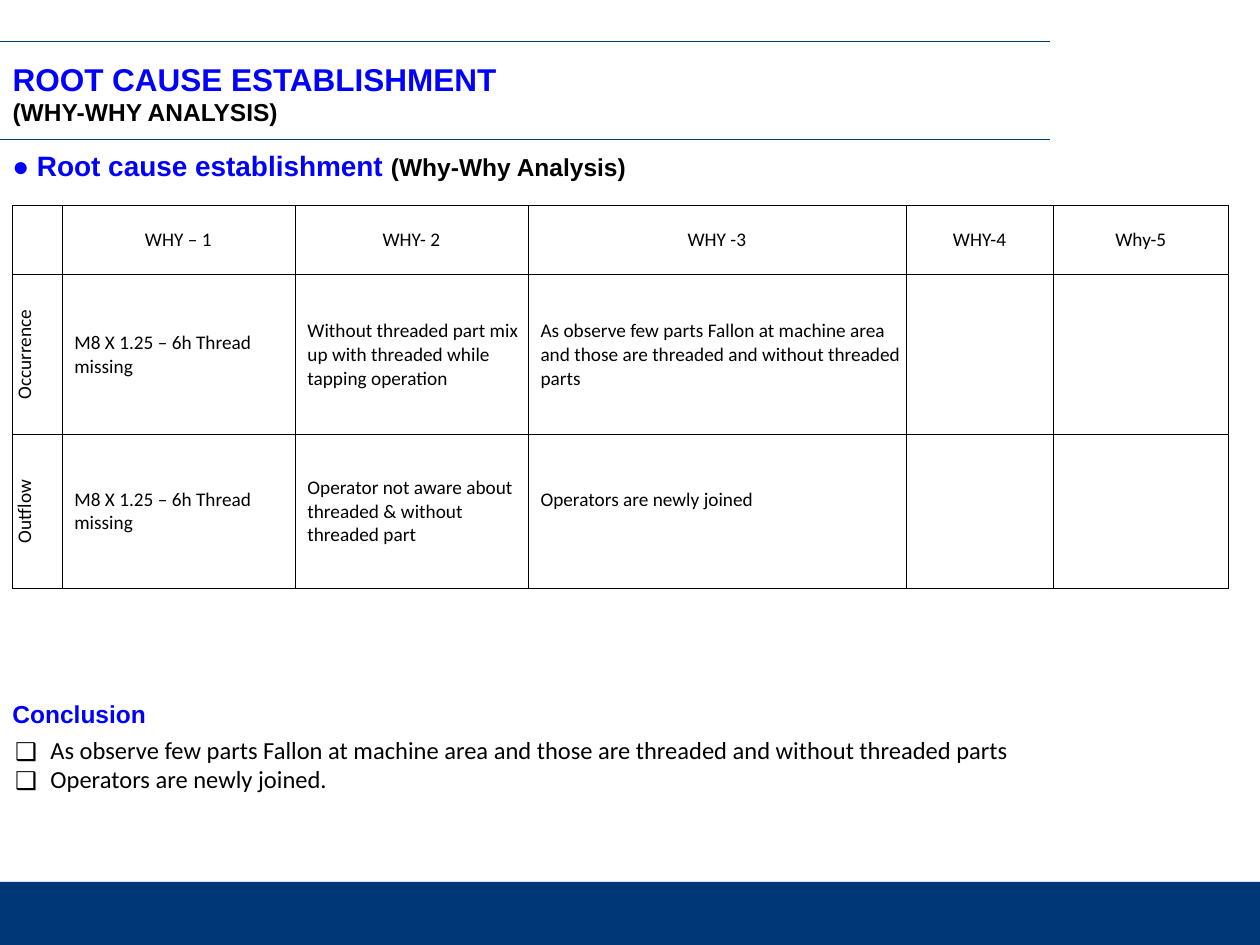
"""Build the why-why root cause analysis slide."""
from lxml.etree import SubElement
from pptx import Presentation
from pptx.dml.color import RGBColor
from pptx.enum.shapes import MSO_CONNECTOR, MSO_SHAPE
from pptx.enum.text import MSO_ANCHOR, PP_ALIGN
from pptx.oxml.ns import qn
from pptx.util import Inches, Pt

BLUE = RGBColor(0x00, 0x00, 0xFF)
NAVY = RGBColor(0x00, 0x37, 0x77)
BLACK = RGBColor(0x00, 0x00, 0x00)
WHITE = RGBColor(0xFF, 0xFF, 0xFF)

TITLE = [("ROOT CAUSE ESTABLISHMENT\v", 18, BLUE), ("(WHY-WHY ANALYSIS)", 14, BLACK)]
SUBTITLE = [("● Root cause establishment ", 16, BLUE), ("(Why-Why Analysis)", 14, BLACK)]
CONCLUSIONS = [
    "As observe few parts Fallon at machine area and those are threaded and without threaded parts",
    "Operators are newly joined.",
]
ROWS = [
    ["", "WHY – 1", "WHY- 2", "WHY -3", "WHY-4", "Why-5"],
    ["Occurrence", "M8 X 1.25 – 6h Thread missing",
     "Without threaded part mix up with threaded while tapping operation",
     "As observe few parts Fallon at machine area and those are threaded and without threaded parts",
     "", ""],
    ["Outflow", "M8 X 1.25 – 6h Thread missing",
     "Operator not aware about threaded & without threaded part",
     "Operators are newly joined", "", ""],
]
COLUMN_WIDTHS = [0.39, 1.85, 1.85, 3, 1.17, 1.39]
ROW_HEIGHTS = [0.55, 1.27, 1.22]
RULE_TOPS = [0.33, 1.11]
RAISED_CELL = (2, 3)


def add_text(para, text, size=14, color=BLACK, font="Arial", bold=False):
    """Append text to a paragraph in the given format, breaking at vertical tabs."""
    for index, part in enumerate(text.split("\v")):
        if index:
            para.add_line_break()
        if part:
            span = para.add_run()
            span.text = part
            span.font.size = Pt(size)
            span.font.name = font
            span.font.bold = bold
            span.font.color.rgb = color


def add_box(page, left, top, width, height, margin=None):
    """Add a wrapping text box and return its text frame."""
    frame = page.shapes.add_textbox(*map(Inches, (left, top, width, height))).text_frame
    frame.word_wrap = True
    if margin is not None:
        frame.margin_left = frame.margin_right = Inches(margin)
        frame.margin_top = frame.margin_bottom = Inches(margin)
    return frame


def add_bullet(para, indent):
    """Give a paragraph a hanging square bullet."""
    properties = para._p.get_or_add_pPr()
    properties.set("marL", str(Inches(indent)))
    properties.set("indent", str(-Inches(indent)))
    SubElement(properties, qn("a:buFont"), typeface="Noto Sans CJK JP")
    SubElement(properties, qn("a:buChar"), char="❑")


def add_borders(cell):
    """Draw a thin black line on each side of a cell."""
    properties = cell._tc.get_or_add_tcPr()
    for side in ("lnL", "lnR", "lnT", "lnB"):
        line = SubElement(properties, qn(f"a:{side}"), w=str(Pt(0.25)))
        SubElement(SubElement(line, qn("a:solidFill")), qn("a:srgbClr"), val=str(BLACK))


def add_frame(page):
    """Add the footer band and the two title rules."""
    band = page.shapes.add_shape(
        MSO_SHAPE.RECTANGLE, Inches(0), Inches(7), Inches(10), Inches(0.5))
    band.shadow.inherit = False
    band.fill.solid()
    band.fill.fore_color.rgb = NAVY
    band.line.fill.background()
    for top in RULE_TOPS:
        rule = page.shapes.add_connector(
            MSO_CONNECTOR.STRAIGHT, Inches(0), Inches(top), Inches(8.33), Inches(top))
        rule.line.color.rgb = NAVY
        rule.line.width = Pt(0.75)
        SubElement(rule._element.spPr, qn("a:effectLst"))


def add_title(page):
    """Place and fill the title placeholder."""
    title = page.shapes.title
    title.left, title.top, title.width, title.height = map(Inches, (0, 0.39, 10, 0.7))
    title.text_frame.vertical_anchor = MSO_ANCHOR.MIDDLE
    para = title.text_frame.paragraphs[0]
    para.alignment = PP_ALIGN.LEFT
    for text, size, color in TITLE:
        add_text(para, text, size=size, color=color, bold=True)


def add_why_table(page):
    """Add the grid of whys."""
    table = page.shapes.add_table(
        len(ROWS), len(COLUMN_WIDTHS), Inches(0.1), Inches(1.63),
        Inches(sum(COLUMN_WIDTHS)), Inches(sum(ROW_HEIGHTS))).table
    table.first_row = table.horz_banding = False
    for column, width in zip(table.columns, COLUMN_WIDTHS):
        column.width = Inches(width)
    for row, height in zip(table.rows, ROW_HEIGHTS):
        row.height = Inches(height)
    for row_index, texts in enumerate(ROWS):
        for column_index, text in enumerate(texts):
            cell = table.cell(row_index, column_index)
            heading = row_index == 0 or column_index == 0
            cell.margin_left = Inches(0 if heading else 0.1)
            cell.margin_right = cell.margin_top = Inches(0)
            raised = (row_index, column_index) == RAISED_CELL
            cell.margin_bottom = Inches(0.18 if raised else 0)
            cell.vertical_anchor = MSO_ANCHOR.MIDDLE
            add_borders(cell)
            cell.fill.solid()
            cell.fill.fore_color.rgb = WHITE
            if column_index == 0 and text:
                cell._tc.tcPr.set("vert", "vert270")
            para = cell.text_frame.paragraphs[0]
            para.alignment = PP_ALIGN.CENTER if heading else PP_ALIGN.LEFT
            add_text(para, text, size=11, font="Calibri")


def add_conclusion(page):
    """Add the conclusion heading and its bullets."""
    heading = add_box(page, 0, 5.5, 2.25, 0.34).paragraphs[0]
    heading.alignment = PP_ALIGN.JUSTIFY
    add_text(heading, "Conclusion", color=BLUE, bold=True)
    frame = add_box(page, 0.12, 5.83, 9.88, 1.08, margin=0)
    for index, text in enumerate(CONCLUSIONS):
        para = frame.add_paragraph() if index else frame.paragraphs[0]
        add_bullet(para, 0.28)
        add_text(para, text, font="Calibri")


def main():
    """Build and save the deck."""
    deck = Presentation()
    deck.slide_width, deck.slide_height = Inches(10), Inches(7.5)
    page = deck.slides.add_slide(deck.slide_layouts[5])
    add_frame(page)
    add_title(page)
    add_why_table(page)
    add_conclusion(page)
    subtitle = add_box(page, 0, 1.13, 7.58, 0.32).paragraphs[0]
    for text, size, color in SUBTITLE:
        add_text(subtitle, text, size=size, color=color, bold=True)
    deck.save("out.pptx")


if __name__ == "__main__":
    main()
